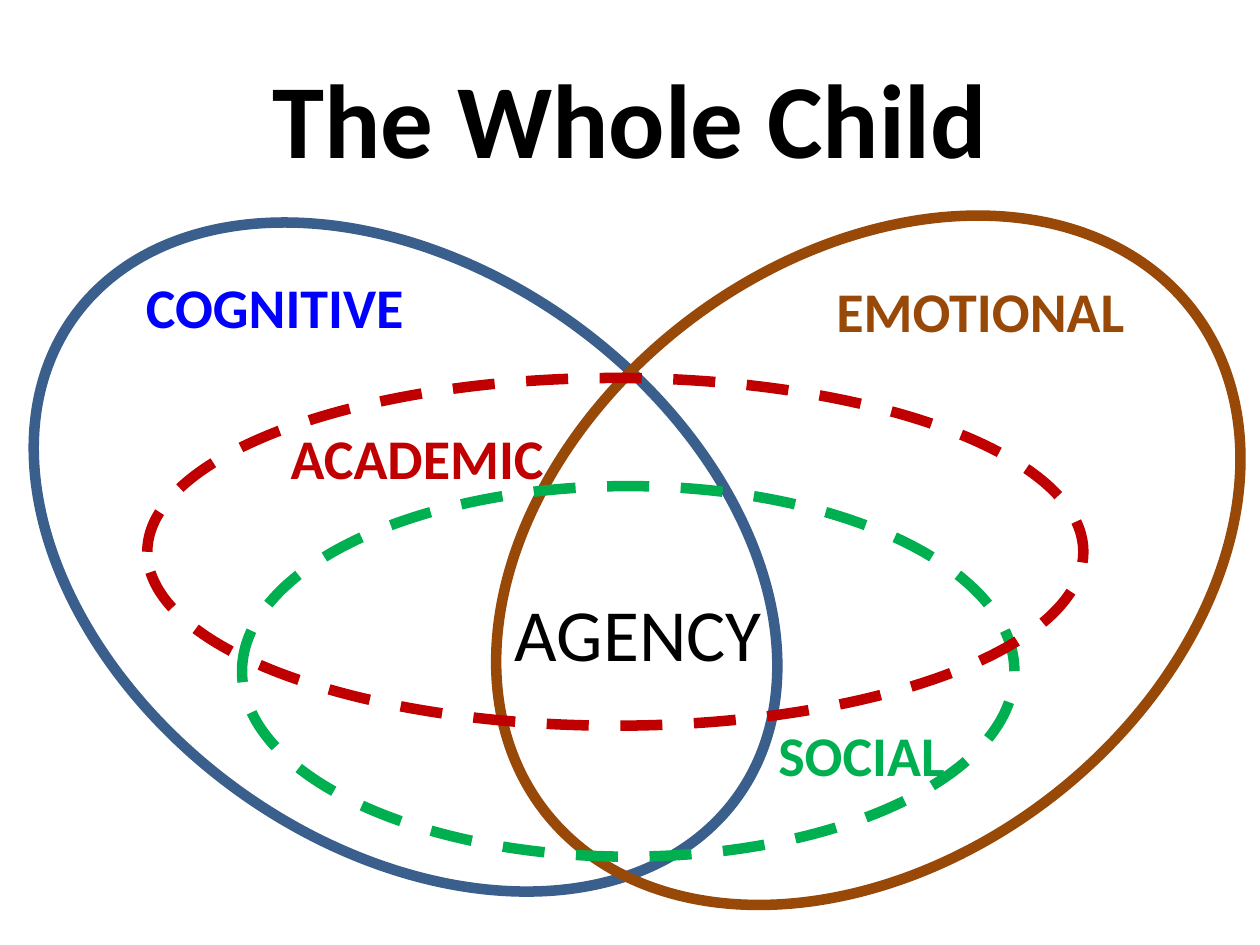
"""Build the slide "The Whole Child": overlapping ellipses with labels."""
from pptx import Presentation
from pptx.dml.color import RGBColor
from pptx.enum.dml import MSO_LINE
from pptx.enum.shapes import MSO_SHAPE
from pptx.enum.text import MSO_ANCHOR as Anchor, MSO_AUTO_SIZE as AutoSize, PP_ALIGN as Align
from pptx.util import Cm, Pt

BLACK = RGBColor(0x00, 0x00, 0x00)
BLUE = RGBColor(0x00, 0x00, 0xFF)
STEEL = RGBColor(0x3A, 0x5F, 0x8C)
BROWN = RGBColor(0x98, 0x48, 0x07)
GREEN = RGBColor(0x00, 0xB0, 0x50)
RED = RGBColor(0xC0, 0x00, 0x00)


def set_attributes(target, values):
    for name, value in values.items():
        setattr(target, name, value)


class VennSlide:
    font_name = "Calibri"
    line_width = Pt(6)
    label_height = 1.63

    def __init__(self, presentation):
        self.slide = presentation.slides.add_slide(presentation.slide_layouts[6])

    def text(self, words, box, size, color, bold=True, align=Align.LEFT, frame_format=None):
        shape = self.slide.shapes.add_textbox(*map(Cm, box))
        frame = shape.text_frame
        set_attributes(frame, frame_format or
                       {"word_wrap": False, "auto_size": AutoSize.SHAPE_TO_FIT_TEXT})
        paragraph = frame.paragraphs[0]
        paragraph.alignment = align
        run = paragraph.add_run()
        run.text = words
        set_attributes(run.font, {"name": self.font_name, "size": Pt(size), "bold": bold})
        run.font.color.rgb = color

    def title(self, words):
        self.text(words, (1.27, 0.76, 22.86, 3.18), 60, BLACK, align=Align.CENTER,
                  frame_format={"word_wrap": True, "vertical_anchor": Anchor.MIDDLE})

    def label(self, words, left, top, width, color):
        self.text(words, (left, top, width, self.label_height), 32, color)

    def ellipse(self, box, color, rotation=0, dash=None):
        shape = self.slide.shapes.add_shape(MSO_SHAPE.OVAL, *map(Cm, box))
        shape.rotation = rotation
        shape.shadow.inherit = False
        shape.fill.background()
        shape.line.color.rgb = color
        set_attributes(shape.line, {"width": self.line_width, "dash_style": dash})


def main():
    presentation = Presentation()
    set_attributes(presentation, {"slide_width": Cm(25.4), "slide_height": Cm(19.05)})
    venn = VennSlide(presentation)
    venn.title("The Whole Child")
    venn.ellipse((-0.08, 5.44, 16.51, 11.58), STEEL, rotation=36)
    venn.ellipse((9.25, 5.26, 16.51, 12.07), BROWN, rotation=322.3)
    venn.label("COGNITIVE", 2.69, 5.36, 5.77, BLUE)
    venn.label("EMOTIONAL", 16.61, 5.44, 6.38, BROWN)
    venn.ellipse((4.88, 9.8, 15.57, 7.47), GREEN, dash=MSO_LINE.DASH)
    venn.label("SOCIAL", 15.44, 14.4, 3.91, GREEN)
    venn.ellipse((2.97, 7.62, 18.87, 7.01), RED, dash=MSO_LINE.DASH)
    venn.label("ACADEMIC", 5.61, 8.41, 5.66, RED)
    venn.text("AGENCY", (10.13, 11.73, 5.54, 2.06), 42, BLACK, bold=False)
    presentation.save("out.pptx")


if __name__ == "__main__":
    main()
